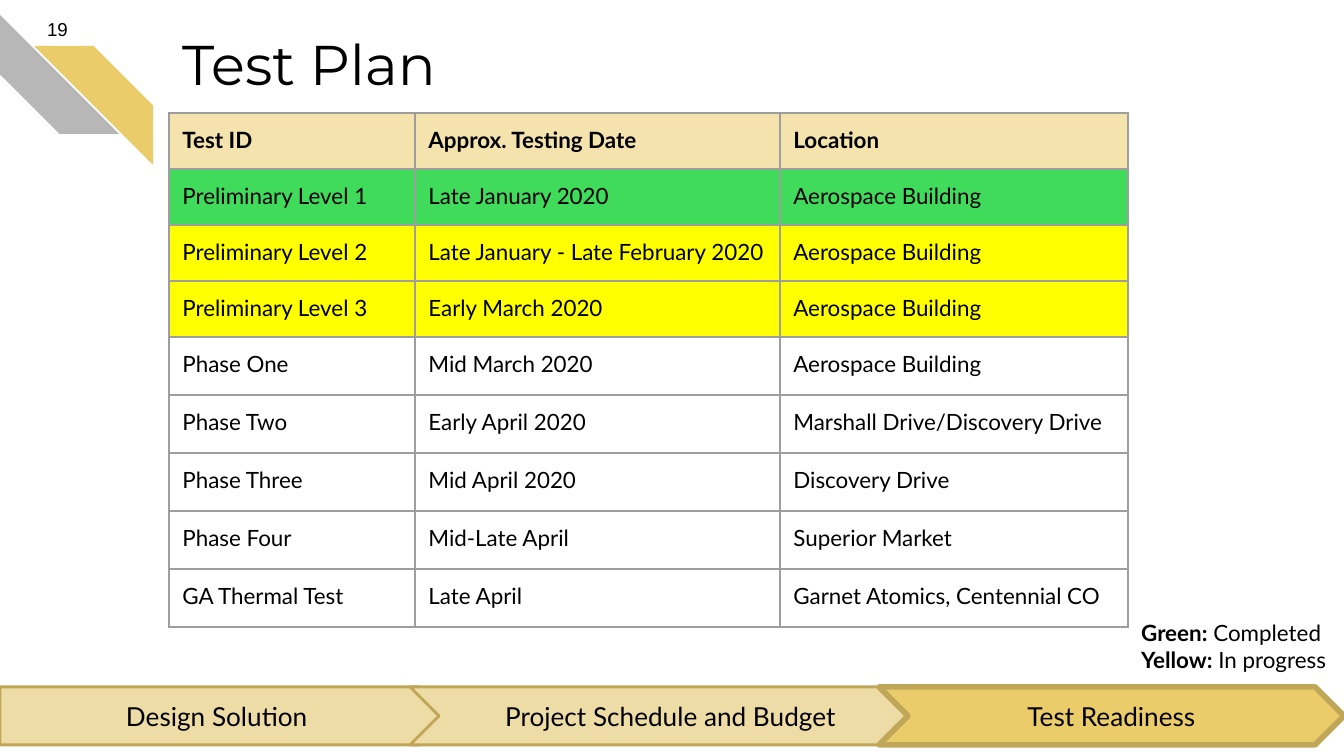
"""Builds the Test Plan slide with its schedule table and progress bar."""
from lxml.etree import SubElement
from pptx import Presentation
from pptx.dml.color import RGBColor
from pptx.enum.shapes import MSO_SHAPE as Shape
from pptx.enum.text import MSO_ANCHOR as Anchor, PP_ALIGN as Align
from pptx.oxml.ns import qn
from pptx.util import Emu, Pt

PX = 914400 / 134.4
BLACK, GRAY, GOLD, PALE_GOLD, DARK_GOLD = "000000", "B7B7B7", "EBCC6A", "EDDCA5", "C0A757"
GREEN, YELLOW, BORDER = "40DB5B", "FFFF00", "9E9E9E"
LAB = "Aerospace Building"
HEADER = ("Test ID", "Approx. Testing Date", "Location")
TESTS = [
    ("Preliminary Level 1", "Late January 2020", LAB, GREEN),
    ("Preliminary Level 2", "Late January - Late February 2020", LAB, YELLOW),
    ("Preliminary Level 3", "Early March 2020", LAB, YELLOW),
    ("Phase One", "Mid March 2020", LAB, None),
    ("Phase Two", "Early April 2020", "Marshall Drive/Discovery Drive", None),
    ("Phase Three", "Mid April 2020", "Discovery Drive", None),
    ("Phase Four", "Mid-Late April", "Superior Market", None),
    ("GA Thermal Test", "Late April", "Garnet Atomics, Centennial CO", None),
]
STAGES = [
    ("Design Solution", Shape.PENTAGON, 0, 448, PALE_GOLD, 1.5),
    ("Project Schedule and Budget", Shape.CHEVRON, 410, 521, PALE_GOLD, 1.5),
    ("Test Readiness", Shape.CHEVRON, 879, 465, GOLD, 3),
]


def px(length):
    """Turn pixels into EMU."""
    return Emu(round(length * PX))


def color(value):
    """Turn a hex string into a colour."""
    return RGBColor.from_string(value)


class SlideBuilder:
    """Holds the text style and the current slide."""

    font = {"name": "Lato", "size": Pt(12), "bold": False}
    margins = dict.fromkeys(("margin_left", "margin_top", "margin_right", "margin_bottom"), Emu(91440))

    def __init__(self, page):
        """Keep the slide to draw on."""
        self.page = page

    def add_span(self, para, text, **style):
        """Add one styled run to a paragraph."""
        span = para.add_run()
        span.text = text
        for name, value in {**self.font, **style}.items():
            setattr(span.font, name, value)
        span.font.color.rgb = color(BLACK)

    def frame(self, box, anchor=Anchor.TOP):
        """Prepare the text frame of a box and return its first paragraph."""
        frame = box.text_frame
        for name, value in {**self.margins, "word_wrap": True, "vertical_anchor": anchor}.items():
            setattr(frame, name, value)
        return frame.paragraphs[0]

    def text(self, bounds, lines, align=Align.LEFT, anchor=Anchor.TOP, **style):
        """Add a text box whose lines are lists of text and bold pairs."""
        box = self.page.shapes.add_textbox(*map(px, bounds))
        para = self.frame(box, anchor)
        for index, line in enumerate(lines):
            if index:
                para = box.text_frame.add_paragraph()
            para.alignment = align
            for text, bold in line:
                self.add_span(para, text, bold=bold, **style)

    def shape(self, kind, bounds, fill, rotation=0):
        """Add a filled shape without outline or shadow."""
        shape = self.page.shapes.add_shape(kind, *map(px, bounds))
        shape.shadow.inherit = False
        shape.rotation = rotation
        shape.fill.solid()
        shape.fill.fore_color.rgb = color(fill)
        shape.line.fill.background()
        return shape

    def stage(self, text, kind, left, width, fill, weight):
        """Add one labelled arrow of the progress bar."""
        arrow = self.shape(kind, (left, 687, width, 58), fill)
        arrow.line.color.rgb = color(DARK_GOLD)
        arrow.line.width = Pt(weight)
        para = self.frame(arrow, Anchor.MIDDLE)
        para.alignment = Align.CENTER
        self.add_span(para, text, size=Pt(14))

    def cell(self, cell, text, fill, bold=False, alpha=None):
        """Fill, border and label one table cell."""
        for name, value in self.margins.items():
            setattr(cell, name, value)
        properties = cell._tc.get_or_add_tcPr()
        for side in ("a:lnL", "a:lnR", "a:lnT", "a:lnB"):
            line = SubElement(properties, qn(side), w=str(Pt(0.75)))
            SubElement(SubElement(line, qn("a:solidFill")), qn("a:srgbClr"), val=BORDER)
        if fill:
            cell.fill.solid()
            cell.fill.fore_color.rgb = color(fill)
        else:
            cell.fill.background()
        if alpha:
            tint = properties.find(qn("a:solidFill")).find(qn("a:srgbClr"))
            SubElement(tint, qn("a:alpha"), val=str(alpha * 1000))
        self.add_span(cell.text_frame.paragraphs[0], text, bold=bold)

    def table(self, left, top, widths, heights, header, rows):
        """Add a table with a tinted header and rows that end in their fill."""
        bounds = (left, top, sum(widths), sum(heights))
        table = self.page.shapes.add_table(len(heights), len(widths), *map(px, bounds)).table
        table.first_row = table.horz_banding = False
        for column, width in zip(table.columns, widths):
            column.width = px(width)
        for row, height in zip(table.rows, heights):
            row.height = px(height)
        for index, text in enumerate(header):
            self.cell(table.cell(0, index), text, GOLD, True, 55)
        for number, (*texts, fill) in enumerate(rows, 1):
            for index, text in enumerate(texts):
                self.cell(table.cell(number, index), text, fill)


def main():
    """Build and save the deck."""
    deck = Presentation()
    deck.slide_width, deck.slide_height = px(1344), px(756)
    slide = SlideBuilder(deck.slides.add_slide(deck.slide_layouts[6]))
    slide.shape(Shape.DIAGONAL_STRIPE, (0, 15, 119, 119), GRAY, 270)
    slide.shape(Shape.DIAGONAL_STRIPE, (34, 46, 119, 119), GOLD, 90)
    slide.text((169, 16, 405, 105), [[("Test Plan", False)]], name="Montserrat", size=Pt(30))
    slide.text((0, 0, 81, 58), [[("19", False)]], Align.RIGHT, Anchor.MIDDLE, name="Arial", size=Pt(10))
    slide.table(169, 113, (246, 365, 348), [56] * 4 + [58] * 5, HEADER, TESTS)
    for stage in STAGES:
        slide.stage(*stage)
    slide.text((1128, 606, 216, 74), [
        [("Green:", True), (" Completed", False)],
        [("Yellow:", True), (" In progress", False)],
    ])
    deck.save("out.pptx")


if __name__ == "__main__":
    main()
